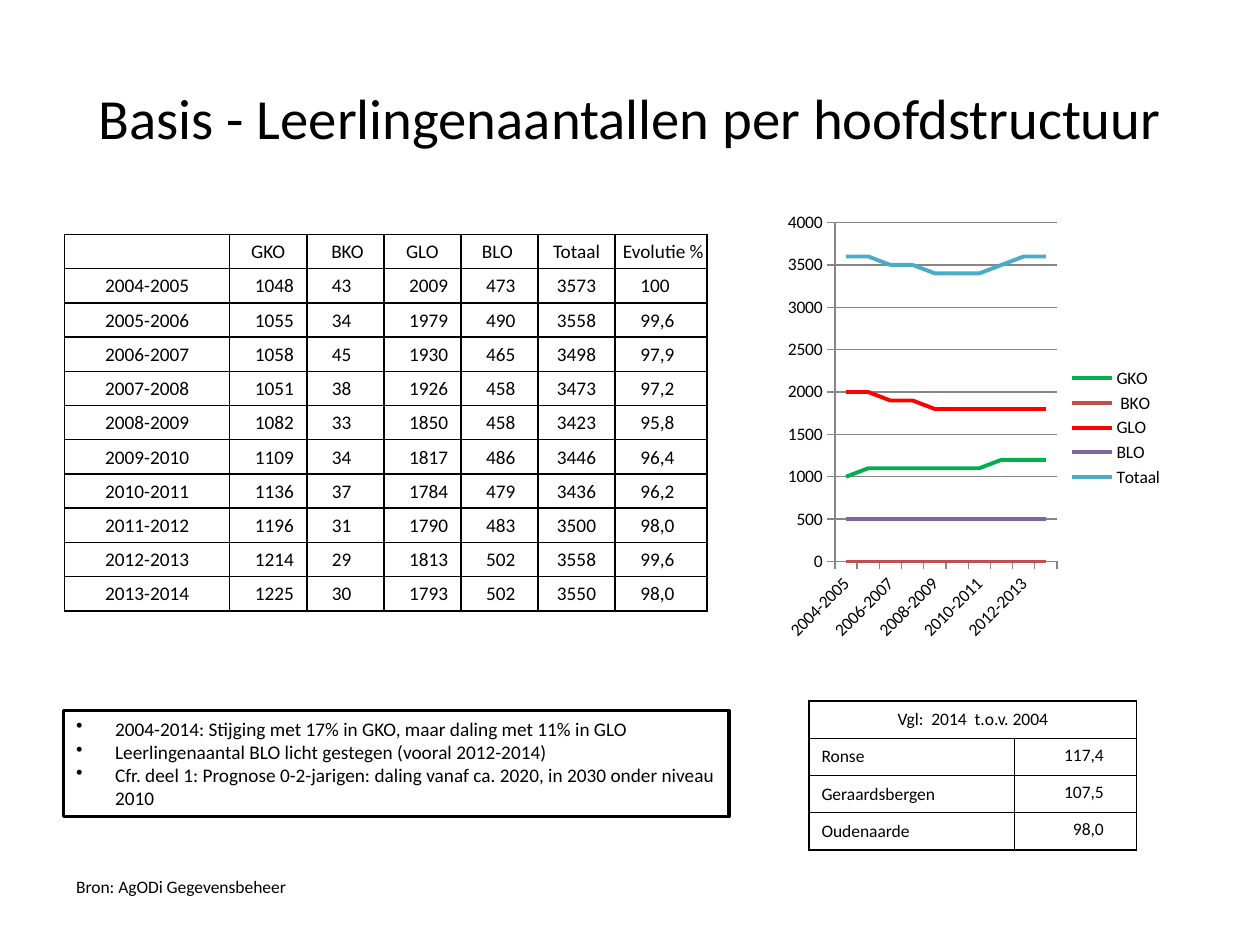
from collections import namedtuple
from dataclasses import dataclass

from lxml import etree
from pptx import Presentation
from pptx.chart.data import CategoryChartData
from pptx.dml.color import RGBColor
from pptx.enum.chart import XL_CHART_TYPE, XL_LEGEND_POSITION, XL_TICK_MARK
from pptx.enum.shapes import MSO_SHAPE
from pptx.enum.text import MSO_ANCHOR, PP_ALIGN
from pptx.oxml.ns import qn
from pptx.util import Emu, Inches, Pt

LINE_CHART = XL_CHART_TYPE.LINE
LEGEND_RIGHT = XL_LEGEND_POSITION.RIGHT
TICK_OUTSIDE = XL_TICK_MARK.OUTSIDE
RECTANGLE = MSO_SHAPE.RECTANGLE
TOP, MIDDLE = MSO_ANCHOR.TOP, MSO_ANCHOR.MIDDLE
LEFT, CENTER, RIGHT = PP_ALIGN.LEFT, PP_ALIGN.CENTER, PP_ALIGN.RIGHT

# The page is a grid of 100 columns by 75 rows.
GRID_COLUMNS, GRID_ROWS = 100, 75
UNIT = Inches(0.1)
Box = namedtuple("Box", "left top width height")


@dataclass(frozen=True)
class Theme:
    font: str = "Calibri"
    ink: str = "000000"
    paper: str = "FFFFFF"
    grid: str = "868686"
    series: tuple = ("00B050", "C0504D", "FF0000", "8064A2", "4BACC6")
    title: float = 32.4
    body: float = 11
    small: float = 10
    border: float = 1
    frame: float = 2
    curve: float = 2.25


THEME = Theme()
DEFAULT_INSETS = (1, 0.5, 1, 0.5)
TIGHT_INSETS = (0.1, 0.1, 0.1, 0)
NUMBER_INSETS = (2, 0.1, 0.2, 0)
RATIO_INSETS = (1.6, 0.5, 2.6, 0.5)

HEADERS = ("", "GKO", " BKO", "GLO", "BLO ", "Totaal", " Evolutie %")
PUPILS = (
    ("2004-2005", 1048, 43, 2009, 473, 3573, "100"),
    ("2005-2006", 1055, 34, 1979, 490, 3558, "99,6"),
    ("2006-2007", 1058, 45, 1930, 465, 3498, "97,9"),
    ("2007-2008", 1051, 38, 1926, 458, 3473, "97,2"),
    ("2008-2009", 1082, 33, 1850, 458, 3423, "95,8"),
    ("2009-2010", 1109, 34, 1817, 486, 3446, "96,4"),
    ("2010-2011", 1136, 37, 1784, 479, 3436, "96,2"),
    ("2011-2012", 1196, 31, 1790, 483, 3500, "98,0"),
    ("2012-2013", 1214, 29, 1813, 502, 3558, "99,6"),
    ("2013-2014", 1225, 30, 1793, 502, 3550, "98,0"),
)
TOWNS = (("Ronse", "117,4"), ("Geraardsbergen", "107,5"), ("Oudenaarde", "98,0"))
FINDINGS = (
    "2004-2014: Stijging met 17% in GKO, maar daling met 11% in GLO",
    "Leerlingenaantal BLO licht gestegen (vooral 2012-2014)",
    "Cfr. deel 1: Prognose 0-2-jarigen: daling vanaf ca. 2020, in 2030 onder niveau 2010",
)


def units(count):
    return Emu(round(count * UNIT))


def place(box):
    return [units(length) for length in box]


def color(code):
    return RGBColor.from_string(code)


def style_font(font, size):
    font.name, font.size = THEME.font, Pt(size)
    font.color.rgb = color(THEME.ink)


def write(frame, text, size=THEME.body, align=LEFT, bullet=False):
    """Fill a text frame, one paragraph for each line of the text."""
    for index, line in enumerate(text.split("\n")):
        para = frame.add_paragraph() if index else frame.paragraphs[0]
        para.alignment = align
        if line:
            span = para.add_run()
            span.text = line
            style_font(span.font, size)
        else:
            etree.SubElement(para._p, qn("a:endParaRPr"), sz=str(round(size * 100)))
        if bullet:
            props = para._p.get_or_add_pPr()
            indent = units(3.1)
            props.set("marL", str(indent))
            props.set("indent", str(-indent))
            etree.SubElement(props, qn("a:buChar"), char="•")


def add_label(page, box, text, anchor=TOP, wrap=True, **text_format):
    frame = page.shapes.add_textbox(*place(box)).text_frame
    frame.word_wrap = wrap
    frame.vertical_anchor = anchor
    write(frame, text, **text_format)


def set_borders(cell):
    props = cell._tc.get_or_add_tcPr()
    for index, side in enumerate(("lnL", "lnR", "lnT", "lnB")):
        line = etree.Element(qn(f"a:{side}"), w=str(Pt(THEME.border)))
        fill = etree.SubElement(line, qn("a:solidFill"))
        etree.SubElement(fill, qn("a:srgbClr"), val=THEME.ink)
        props.insert(index, line)


def add_grid(page, box, row_count, column_widths):
    """Add a plain white table with equal rows and thin borders."""
    table = page.shapes.add_table(row_count, len(column_widths), *place(box)).table
    table.first_row = table.horz_banding = False
    for column, width in zip(table.columns, column_widths):
        column.width = units(width)
    for row in table.rows:
        row.height = units(box.height / row_count)
        for cell in row.cells:
            cell.fill.solid()
            cell.fill.fore_color.rgb = color(THEME.paper)
            set_borders(cell)
    return table


def fill_cell(cell, text, insets=DEFAULT_INSETS, anchor=MIDDLE, **text_format):
    (cell.margin_left, cell.margin_top,
     cell.margin_right, cell.margin_bottom) = place(insets)
    cell.vertical_anchor = anchor
    write(cell.text_frame, text, **text_format)


def add_pupil_table(page, box):
    year_width, last_width = 13.1, 7.3
    middle_width = (box.width - year_width - last_width) / 5
    widths = [year_width] + [middle_width] * 5 + [last_width]
    rows = (HEADERS,) + PUPILS
    table = add_grid(page, box, len(rows), widths)
    centered_columns = (HEADERS.index(""), HEADERS.index("Totaal"))
    for r, row in enumerate(rows):
        for c, value in enumerate(row):
            centered = r == 0 or c in centered_columns
            fill_cell(table.cell(r, c), str(value),
                      insets=TIGHT_INSETS if centered else NUMBER_INSETS,
                      align=CENTER if centered else LEFT)


def add_town_table(page, box):
    name_width = 16.3
    table = add_grid(page, box, len(TOWNS) + 1, (name_width, box.width - name_width))
    heading = table.cell(0, 0)
    heading.merge(table.cell(0, 1))
    fill_cell(heading, "Vgl:  2014  t.o.v. 2004", size=THEME.small, align=CENTER)
    for r, (town, ratio) in enumerate(TOWNS, start=1):
        fill_cell(table.cell(r, 0), town, size=THEME.small)
        fill_cell(table.cell(r, 1), ratio, insets=RATIO_INSETS, anchor=TOP,
                  size=THEME.small, align=RIGHT)


def add_findings(page, box):
    shape = page.shapes.add_shape(RECTANGLE, *place(box))
    shape.shadow.inherit = False
    shape.fill.solid()
    shape.fill.fore_color.rgb = color(THEME.paper)
    shape.line.color.rgb = color(THEME.ink)
    shape.line.width = Pt(THEME.frame)
    shape.text_frame.word_wrap = True
    shape.text_frame.vertical_anchor = TOP
    write(shape.text_frame, "\n".join(FINDINGS), bullet=True)


def set_plot_area(chart, **shares):
    """Fix the inner plot area as shares of the chart."""
    area = chart._chartSpace.chart.plotArea
    for old in area.findall(qn("c:layout")):
        area.remove(old)
    layout = etree.Element(qn("c:layout"))
    manual = etree.SubElement(layout, qn("c:manualLayout"))
    settings = {"layoutTarget": "inner", "xMode": "edge", "yMode": "edge", **shares}
    for name, value in settings.items():
        etree.SubElement(manual, qn(f"c:{name}"), val=str(value))
    area.insert(0, layout)


def slant_labels(axis, skip):
    axis.tick_labels.font.size = Pt(THEME.small)
    body = axis._element.find(qn("c:txPr")).find(qn("a:bodyPr"))
    body.set("rot", "-2700000")
    step = etree.Element(qn("c:tickLblSkip"), val=str(skip))
    axis._element.find(qn("c:noMultiLvlLbl")).addprevious(step)


def add_pupil_chart(page, box):
    data = CategoryChartData()
    data.categories = [row[0] for row in PUPILS]
    for c, name in enumerate(HEADERS[1:-1], start=1):
        data.add_series(name, [round(row[c], -2) for row in PUPILS])
    chart = page.shapes.add_chart(LINE_CHART, *place(box), data).chart
    style_font(chart.font, THEME.small)
    chart.has_title = False
    chart.has_legend = True
    chart.legend.position = LEGEND_RIGHT
    chart.legend.include_in_layout = False
    chart.plots[0].vary_by_categories = False
    for series, code in zip(chart.plots[0].series, THEME.series):
        series.smooth = False
        series.format.line.color.rgb = color(code)
        series.format.line.width = Pt(THEME.curve)
    years, counts = chart.category_axis, chart.value_axis
    counts.minimum_scale, counts.maximum_scale, counts.major_unit = 0, 4000, 500
    counts.has_major_gridlines = True
    for axis in (years, counts):
        axis.major_tick_mark = TICK_OUTSIDE
    for part in (years, counts, counts.major_gridlines):
        part.format.line.color.rgb = color(THEME.grid)
        part.format.line.width = Pt(0.75)
    slant_labels(years, skip=2)
    set_plot_area(chart, x=0.14, y=0.04, w=0.56, h=0.76)


def build_page(page):
    add_label(page, Box(5, 3, 90, 12.5), "Basis - Leerlingenaantallen per hoofdstructuur",
              anchor=MIDDLE, size=THEME.title, align=CENTER)
    add_pupil_table(page, Box(5.13, 18.6, 51, 29.9))
    add_findings(page, Box(5.05, 56.4, 52.8, 8.4))
    add_label(page, Box(5.05, 69, 20.9, 2.7), "Bron: AgODi Gegevensbeheer",
              wrap=False, size=THEME.small)
    add_town_table(page, Box(64.2, 55.65, 26, 11.8))
    add_pupil_chart(page, Box(61.85, 16.25, 31.5, 35.4))


def main():
    deck = Presentation()
    deck.slide_width, deck.slide_height = units(GRID_COLUMNS), units(GRID_ROWS)
    build_page(deck.slides.add_slide(deck.slide_layouts[6]))
    deck.save("out.pptx")


if __name__ == "__main__":
    main()
